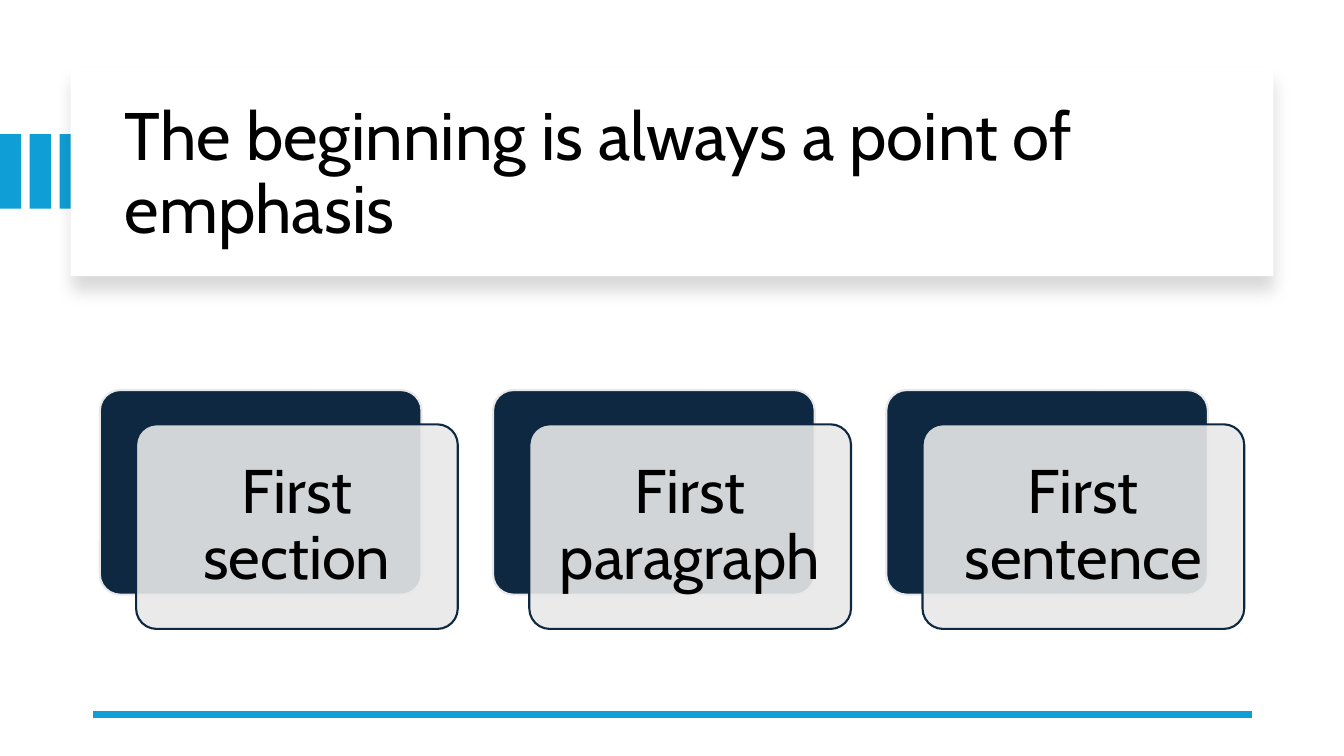
from lxml import etree
from pptx import Presentation
from pptx.dml.color import RGBColor
from pptx.enum.shapes import MSO_CONNECTOR, MSO_SHAPE
from pptx.enum.text import MSO_ANCHOR, PP_ALIGN
from pptx.oxml.ns import qn
from pptx.util import Inches, Pt

RECTANGLE = MSO_SHAPE.RECTANGLE
ROUNDED = MSO_SHAPE.ROUNDED_RECTANGLE
STRAIGHT = MSO_CONNECTOR.STRAIGHT
MIDDLE = MSO_ANCHOR.MIDDLE
LEFT, CENTER = PP_ALIGN.LEFT, PP_ALIGN.CENTER

FONT = "Cabin"
COLORS = {
    "blue": "0F9ED5",
    "navy": "0E2841",
    "gray": "E8E8E8",
    "white": "FFFFFF",
    "black": "000000",
}


def add_block(kind, left, top, width, height, fill, line=None):
    block = page.shapes.add_shape(
        kind, Inches(left), Inches(top), Inches(width), Inches(height)
    )
    block.shadow.inherit = False
    block.fill.solid()
    block.fill.fore_color.rgb = RGBColor.from_string(COLORS[fill])
    if line:
        block.line.color.rgb = RGBColor.from_string(COLORS[line])
        block.line.width = Pt(1.5)
        block.adjustments[0] = 0.1
    else:
        block.line.fill.background()
    return block


def write_text(box, text, size, align, inset_x, inset_y):
    frame = box.text_frame
    frame.word_wrap = True
    frame.vertical_anchor = MIDDLE
    frame.margin_left = frame.margin_right = Inches(inset_x)
    frame.margin_top = frame.margin_bottom = Inches(inset_y)
    frame.text = text
    para = frame.paragraphs[0]
    para.alignment = align
    para.line_spacing = 0.9
    span = para.runs[0]
    span.font.name = FONT
    span.font.size = Pt(size)
    span.font.color.rgb = RGBColor.from_string(COLORS["black"])


deck = Presentation()
deck.slide_width = Inches(13.33)
deck.slide_height = Inches(7.5)
page = deck.slides.add_slide(deck.slide_layouts[6])

for index in range(3):
    add_block(RECTANGLE, index * 0.295, 1.33, 0.21, 0.74, "blue")

panel = add_block(RECTANGLE, 0.7, 0.67, 11.93, 2.07, "white")
effects = panel._element.spPr.find(qn("a:effectLst"))
shadow = etree.SubElement(
    effects,
    qn("a:outerShdw"),
    blurRad=str(Pt(11)),
    dist=str(Pt(10)),
    dir="5400000",
    algn="t",
    rotWithShape="0",
)
shade = etree.SubElement(shadow, qn("a:srgbClr"), val=COLORS["black"])
etree.SubElement(shade, qn("a:alpha"), val="15000")

title = page.shapes.add_textbox(Inches(1.14), Inches(0.89), Inches(11.13), Inches(1.7))
write_text(title, "The beginning is always a point of emphasis", 48, LEFT, 0.1, 0.05)

rule = page.shapes.add_connector(
    STRAIGHT, Inches(12.42), Inches(7.09), Inches(0.92), Inches(7.09)
)
rule.line.color.rgb = RGBColor.from_string(COLORS["blue"])
rule.line.width = Pt(4.5)
etree.SubElement(rule._element.spPr, qn("a:effectLst"))

for index, label in enumerate(["First section", "First paragraph", "First sentence"]):
    left = 0.99 + index * 3.9
    add_block(ROUNDED, left, 3.87, 3.19, 2.03, "navy", "gray")
    card = add_block(ROUNDED, left + 0.36, 4.21, 3.19, 2.03, "gray", "navy")
    tint = card._element.spPr.find(qn("a:solidFill")).find(qn("a:srgbClr"))
    etree.SubElement(tint, qn("a:alpha"), val="90000")
    write_text(card, label, 44, CENTER, 0.18, 0.18)

deck.save("out.pptx")
